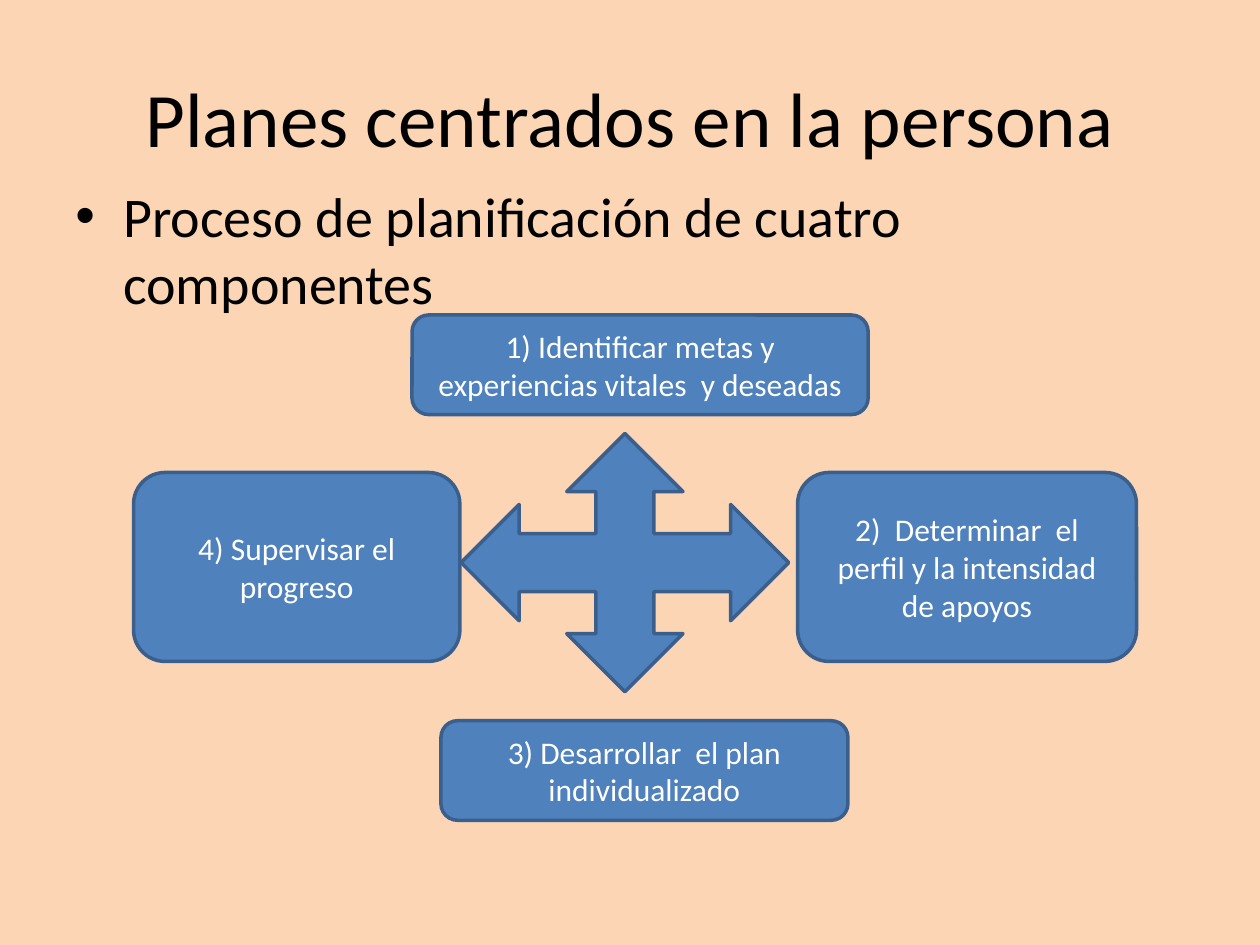
from pptx import Presentation
from pptx.dml.color import RGBColor
from pptx.enum.shapes import MSO_SHAPE
from pptx.enum.text import MSO_ANCHOR, PP_ALIGN
from pptx.util import Inches, Pt
from lxml.etree import SubElement
from pptx.oxml.ns import qn

# Content
TITLE = "Planes centrados en la persona"
BULLET = "Proceso de planificación de cuatro componentes"
ARROW = (3.66, 3.44, 2.6, 2.05)
COMPONENTS = [  # text, (left, top, width, height)
    ("1) Identificar metas y experiencias vitales  y deseadas", (3.27, 2.5, 3.62, 0.79)),
    ("2)  Determinar  el perfil y la intensidad de apoyos", (6.33, 3.75, 2.69, 1.5)),
    ("3) Desarrollar  el plan individualizado", (3.5, 5.72, 3.23, 0.79)),
    ("4) Supervisar el progreso", (1.06, 3.75, 2.59, 1.5)),
]
BACKGROUND, FILL, OUTLINE = "FCD5B5", "4F81BD", "3A5F8C"
BLACK, WHITE = "000000", "FFFFFF"


def color(value):
    return RGBColor.from_string(value)


def write(shape, text, size, text_color, align, anchor):
    frame = shape.text_frame
    frame.word_wrap = True
    frame.vertical_anchor = anchor
    paragraph = frame.paragraphs[0]
    paragraph.text = text
    paragraph.alignment = align
    paragraph.font.name = "Calibri"
    paragraph.font.size = Pt(size)
    paragraph.font.color.rgb = color(text_color)
    return paragraph


def add_block(slide, kind, box):
    shape = slide.shapes.add_shape(kind, *map(Inches, box))
    shape.shadow.inherit = False
    shape.fill.solid()
    shape.fill.fore_color.rgb = color(FILL)
    shape.line.color.rgb = color(OUTLINE)
    shape.line.width = Pt(2)
    return shape


presentation = Presentation()
presentation.slide_width, presentation.slide_height = Inches(10), Inches(7.5)
slide = presentation.slides.add_slide(presentation.slide_layouts[6])
slide.background.fill.solid()
slide.background.fill.fore_color.rgb = color(BACKGROUND)

# Title
title = slide.shapes.add_textbox(Inches(0.5), Inches(0.3), Inches(9), Inches(1.25))
write(title, TITLE, 44, BLACK, PP_ALIGN.CENTER, MSO_ANCHOR.MIDDLE)

# Bulleted introduction
body = slide.shapes.add_textbox(Inches(0.5), Inches(1.39), Inches(9), Inches(5.31))
paragraph = write(body, BULLET, 32, BLACK, PP_ALIGN.LEFT, MSO_ANCHOR.TOP)
paragraph.space_before = Pt(2)
properties = paragraph._p.get_or_add_pPr()
properties.set("marL", str(Inches(0.38)))
properties.set("indent", str(-Inches(0.38)))
bullet_font = SubElement(properties, qn("a:buFont"))
bullet_font.set("typeface", "Arial")
SubElement(properties, qn("a:buChar")).set("char", "•")
# Run defaults come last in paragraph properties
properties.append(properties.find(qn("a:defRPr")))

# Four-way arrow and the components around it
add_block(slide, MSO_SHAPE.QUAD_ARROW, ARROW)
for text, box in COMPONENTS:
    block = add_block(slide, MSO_SHAPE.ROUNDED_RECTANGLE, box)
    write(block, text, 18, WHITE, PP_ALIGN.CENTER, MSO_ANCHOR.MIDDLE)

presentation.save("out.pptx")
